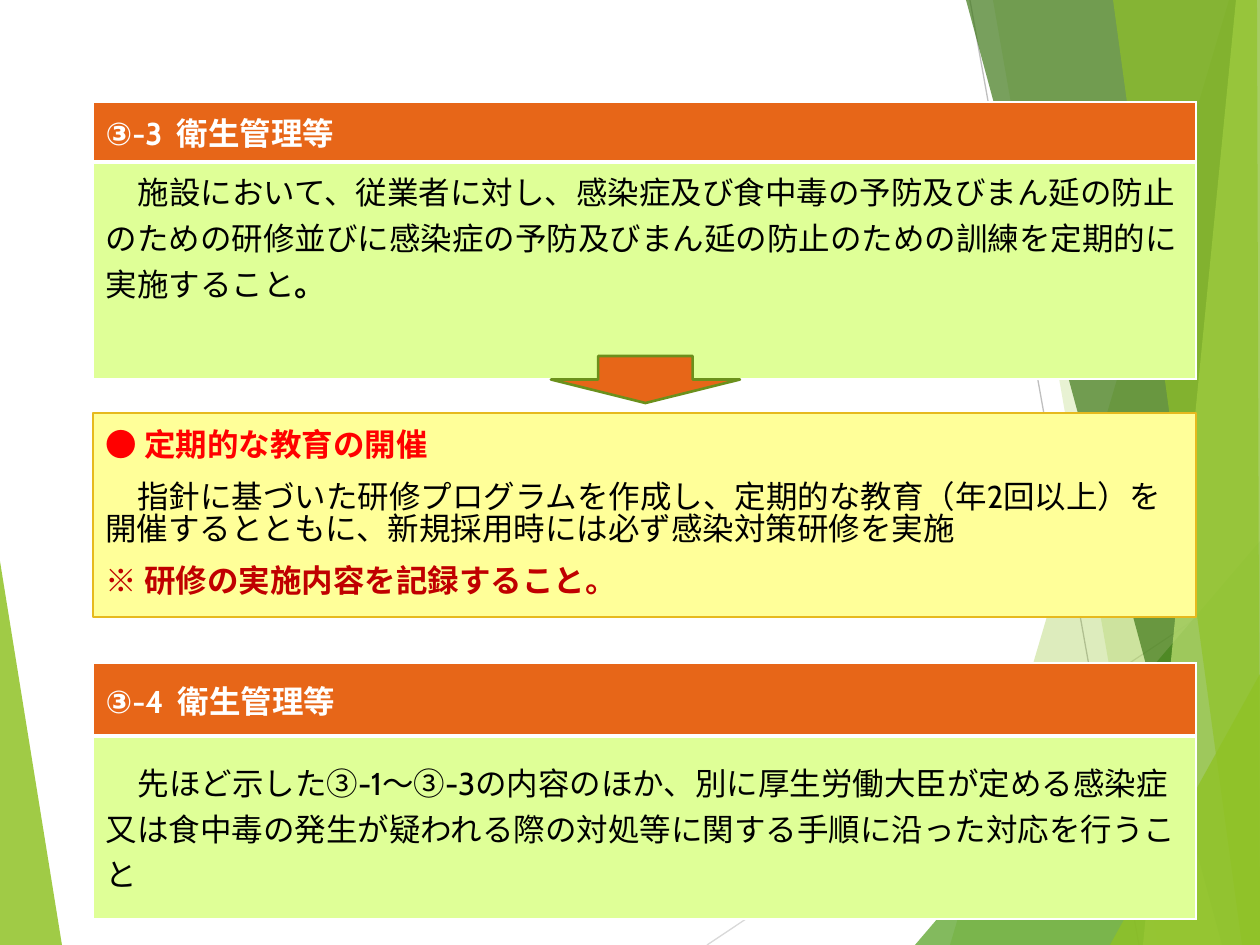
from lxml import etree
from pptx import Presentation
from pptx import util as u
from pptx.dml.color import RGBColor
from pptx.enum import shapes, text
from pptx.oxml import ns

EMU_PER_PX = 914400 / 126
COLORS = {
    "white": "FFFFFF", "black": "000000", "red": "FF0000", "dark_red": "C00000",
    "orange": "E76618", "pale_green": "DFFF97", "yellow": "FFFF99", "gold": "E6B91E",
    "olive": "6B901C", "leaf": "90C226", "green": "54A021", "forest": "3F7819",
    "lime": "C0E474", "silver": "D9D9D9", "gray": "BFBFBF",
}
RGB = {name: RGBColor.from_string(value) for name, value in COLORS.items()}


def px(*values):
    return [u.Emu(round(value * EMU_PER_PX)) for value in values]


def write(paragraph, runs, before=0, after=0, indent=0):
    paragraph.alignment = text.PP_ALIGN.LEFT
    paragraph.space_before = u.Pt(before)
    paragraph.space_after = u.Pt(after)
    if indent:
        properties = paragraph._p.get_or_add_pPr()
        properties.set("marL", "0")
        properties.set("indent", str(px(indent)[0]))
    for wording, color, bold, font in runs:
        run = paragraph.add_run()
        run.text = wording
        run.font.size = u.Pt(18)
        run.font.name = font
        run.font.bold = bold
        run.font.color.rgb = RGB[color]


deck = Presentation()
deck.slide_width, deck.slide_height = px(1260, 945)
slide = deck.slides.add_slide(deck.slide_layouts[6])

for x1, y1, x2, y2, color in [
    (707, 945, 1260, 576, "silver"),
    (970, 0, 1139, 945, "gray"),
]:
    ray = slide.shapes.add_connector(shapes.MSO_CONNECTOR.STRAIGHT, *px(x1, y1, x2, y2))
    ray.line.color.rgb = RGB[color]
    ray.line.width = u.Pt(0.75)
    etree.SubElement(ray._element.spPr, ns.qn("a:effectLst"))

facets = [
    ([(0, 561), (62, 945), (0, 945)], "leaf", 85),
    ([(1229, 0), (950, 945), (1260, 945), (1260, 0)], "leaf", 30),
    ([(993, 0), (1158, 945), (1260, 945), (1260, 0)], "leaf", 20),
    ([(915, 945), (1260, 541), (1260, 945)], "green", 72),
    ([(966, 0), (1222, 945), (1260, 945), (1260, 0)], "forest", 70),
    ([(1236, 0), (1143, 945), (1260, 945), (1260, 0)], "lime", 70),
    ([(1113, 0), (1242, 945), (1260, 945), (1257, 0)], "leaf", 65),
    ([(1110, 945), (1260, 674), (1260, 945)], "leaf", 80),
]
for points, color, opacity in facets:
    outline = slide.shapes.build_freeform(*points[0], scale=EMU_PER_PX)
    outline.add_line_segments(points[1:], close=True)
    facet = outline.convert_to_shape()
    facet.shadow.inherit = False
    facet.line.fill.background()
    facet.fill.solid()
    facet.fill.fore_color.rgb = RGB[color]
    tint = facet._element.spPr.find(ns.qn("a:solidFill"))[0]
    etree.SubElement(tint, ns.qn("a:alpha"), val=str(opacity * 1000))

requirements = [
    (102, 60, 217, text.MSO_ANCHOR.TOP, "③-3  衛生管理等", [
        ("施設において、従業者に対し、感染症及び食中毒の予防及びまん延の防止のための研修並びに"
         "感染症の予防及びまん延の防止のための訓練を定期的に実施すること", "black", False, "Cabin"),
        ("。", "black", True, "Cabin"),
    ]),
    (663, 73, 183, text.MSO_ANCHOR.MIDDLE, "③-4  衛生管理等", [
        ("先ほど示した③-1～③-3の内容のほか、別に厚生労働大臣が定める感染症又は食中毒の"
         "発生が疑われる際の対処等に関する手順に沿った対応を行うこと", "black", False, "Cabin"),
    ]),
]
for top, heading_height, body_height, body_anchor, heading, body in requirements:
    table = slide.shapes.add_table(
        2, 1, *px(93, top, 1103, heading_height + body_height)).table
    rows = [
        (heading_height, "orange", text.MSO_ANCHOR.MIDDLE,
         [(heading, "white", True, "Cabin")], 0, 0, 3),
        (body_height, "pale_green", body_anchor, body, 6, 32, 1),
    ]
    for index, (height, fill, anchor, runs, after, indent, bottom) in enumerate(rows):
        table.rows[index].height = px(height)[0]
        cell = table.cell(index, 0)
        cell.fill.solid()
        cell.fill.fore_color.rgb = RGB[fill]
        cell.vertical_anchor = anchor
        write(cell.text_frame.paragraphs[0], runs, 6, after, indent)
        above = 1 if index == 0 else 3
        borders = [("lnL", 1), ("lnR", 1), ("lnT", above), ("lnB", bottom)]
        for order, (side, width) in enumerate(borders):
            border = etree.Element(ns.qn(f"a:{side}"), w=str(u.Pt(width)))
            paint = etree.SubElement(border, ns.qn("a:solidFill"))
            etree.SubElement(paint, ns.qn("a:srgbClr"), val=COLORS["white"])
            cell._tc.get_or_add_tcPr().insert(order, border)

training = slide.shapes.add_shape(shapes.MSO_SHAPE.RECTANGLE, *px(93, 413, 1103, 204))
arrow = slide.shapes.add_shape(shapes.MSO_SHAPE.DOWN_ARROW, *px(551, 356, 189, 47))
for part, fill, line, width in [
    (training, "yellow", "gold", 1),
    (arrow, "orange", "olive", 1.5),
]:
    part.shadow.inherit = False
    part.fill.solid()
    part.fill.fore_color.rgb = RGB[fill]
    part.line.color.rgb = RGB[line]
    part.line.width = u.Pt(width)

frame = training.text_frame
frame.word_wrap = True
frame.vertical_anchor = text.MSO_ANCHOR.MIDDLE
training_notes = [
    ([("● 定期的な教育の開催", "red", True, "Cabin")], 0, 6, 0),
    ([("指針に基づいた研修プログラムを作成し、定期的な教育（年2回以上）を開催するとともに、"
       "新規採用時には必ず感染対策研修を実施", "black", False, "Cabin")], 6, 12, 32),
    ([("※ ", "dark_red", True, "Cabin"),
      ("研修の実施内容を記録すること。", "dark_red", True, "Arial")], 0, 0, 0),
]
for index, (runs, before, after, indent) in enumerate(training_notes):
    paragraph = frame.add_paragraph() if index else frame.paragraphs[0]
    paragraph.line_spacing = 0.83
    write(paragraph, runs, before, after, indent)

deck.save("out.pptx")
